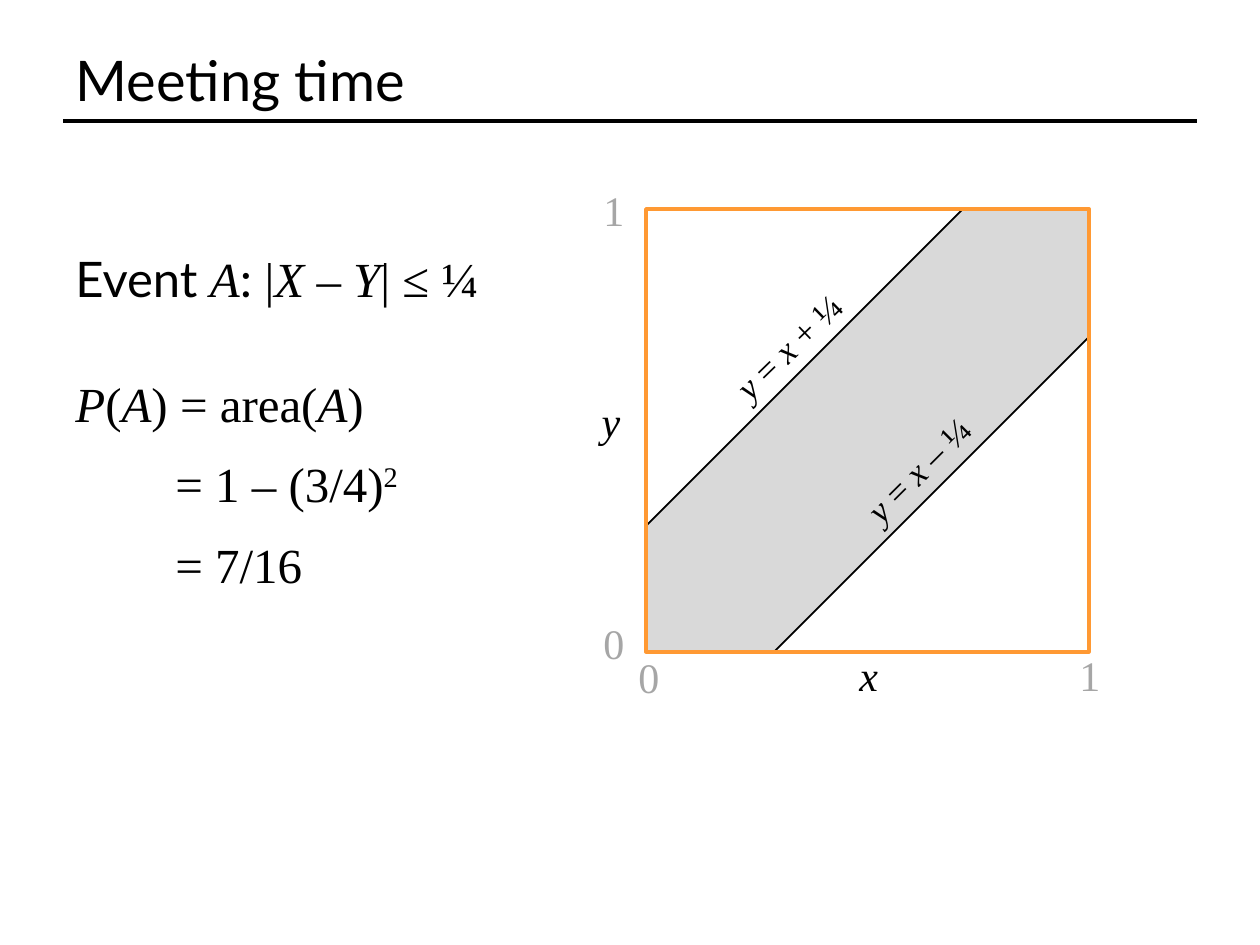
from lxml.etree import SubElement
from pptx import Presentation
from pptx.dml.color import RGBColor
from pptx.enum.shapes import MSO_CONNECTOR as CONNECTOR, MSO_SHAPE as SHAPE
from pptx.enum.text import MSO_ANCHOR as ANCHOR, MSO_AUTO_SIZE as AUTO_SIZE, PP_ALIGN as ALIGN
from pptx.oxml.ns import qn
from pptx.util import Emu, Pt

SCALE = 914400 / 126
LEFT, TOP, SIDE, OFFSET = 646, 209, 443, 126
RIGHT, BOTTOM = LEFT + SIDE, TOP + SIDE
BLACK, GREY, ORANGE, BAND = "000000", "A6A6A6", "FF9933", "D9D9D9"
SERIF = {"name": "Times New Roman", "italic": False}
ITALIC = {**SERIF, "italic": True}
SANS = {"name": "Lato", "italic": False}


def px(length):
    """Turn a length in px into EMU."""
    return Emu(round(length * SCALE))


def rgb(value):
    """Turn a hex string into a colour."""
    return RGBColor.from_string(value)


def add_run(paragraph, text, style, size, color):
    """Append one formatted run to a paragraph."""
    run = paragraph.add_run()
    run.text = text
    for key, value in {**style, "size": Pt(size)}.items():
        setattr(run.font, key, value)
    run.font.color.rgb = rgb(color)
    return run


def add_title(slide, text):
    """Place and format the title placeholder."""
    title = slide.shapes.title
    place = {"left": 63, "top": 38, "width": 1134, "height": 83}
    for key, value in place.items():
        setattr(title, key, px(value))
    frame = title.text_frame
    frame.auto_size = AUTO_SIZE.NONE
    frame.vertical_anchor = ANCHOR.MIDDLE
    frame.paragraphs[0].alignment = ALIGN.LEFT
    add_run(frame.paragraphs[0], text, SANS, 32, BLACK)


def add_text(slide, box, runs, size, color=BLACK, align=ALIGN.LEFT, rotation=0, wrap=False):
    """Add a text box of styled runs and return its last run."""
    label = slide.shapes.add_textbox(*map(px, box))
    label.rotation = rotation
    frame = label.text_frame
    frame.word_wrap = wrap
    frame.auto_size = AUTO_SIZE.SHAPE_TO_FIT_TEXT
    frame.paragraphs[0].alignment = align
    for text, style in runs:
        last = add_run(frame.paragraphs[0], text, style, size, color)
    return last


def add_line(slide, start, end, width):
    """Draw a straight black line without a shadow."""
    line = slide.shapes.add_connector(CONNECTOR.STRAIGHT, *map(px, (*start, *end)))
    line.line.color.rgb = rgb(BLACK)
    line.line.width = Pt(width)
    SubElement(line._element.spPr, qn("a:effectLst"))


def add_band(slide, points):
    """Fill the area of the event."""
    builder = slide.shapes.build_freeform(*map(px, points[0]), scale=1.0)
    builder.add_line_segments([tuple(map(px, point)) for point in points[1:]], close=True)
    band = builder.convert_to_shape()
    band.fill.solid()
    band.fill.fore_color.rgb = rgb(BAND)
    band.line.fill.background()
    band.shadow.inherit = False


def add_unit_square(slide):
    """Outline the sample space."""
    square = slide.shapes.add_shape(SHAPE.RECTANGLE, *map(px, (LEFT, TOP, SIDE, SIDE)))
    square.fill.background()
    square.line.color.rgb = rgb(ORANGE)
    square.line.width = Pt(2)
    square.shadow.inherit = False


def add_derivation(slide):
    """Write the event and its probability."""
    event = [("Event ", SANS), ("A", ITALIC), (": ", SANS), ("|", SERIF), ("X", ITALIC),
             (" – ", SERIF), ("Y", ITALIC), ("| ≤ ¼", SERIF)]
    area = [("P", ITALIC), ("(", SERIF), ("A", ITALIC), (") = area(", SERIF),
            ("A", ITALIC), (")", SERIF)]
    add_text(slide, (63, 242, 496, 72), event, 28, wrap=True)
    add_text(slide, (63, 367, 323, 72), area, 28)
    exponent = add_text(slide, (163, 447, 267, 72), [("= 1 – (3/4)", SERIF), ("2", SERIF)], 28)
    exponent.font._element.set("baseline", "30000")
    add_text(slide, (163, 528, 165, 72), [("= 7/16", SERIF)], 28)


def add_diagram(slide):
    """Draw the unit square with its band, bounds and axis labels."""
    upper = (LEFT, BOTTOM - OFFSET), (RIGHT - OFFSET, TOP)
    lower = (LEFT + OFFSET + 2, BOTTOM), (RIGHT, TOP + OFFSET + 2)
    add_band(slide, [*upper, (RIGHT, TOP), *reversed(lower), (LEFT, BOTTOM)])
    bounds = [
        (upper, (702, 316, 179, 55), [(" = ", SERIF), ("x", ITALIC), (" + ¼ ", SERIF)], 315.9),
        (lower, (834, 442, 168, 55), [(" = ", SERIF), ("x ", ITALIC), ("– ¼", SERIF)], 315.1),
    ]
    for ends, box, formula, rotation in bounds:
        add_line(slide, *ends, 1)
        add_text(slide, box, [("y", ITALIC), *formula], 20, align=ALIGN.CENTER, rotation=rotation)
    add_unit_square(slide)
    add_text(slide, (847, 643, 50, 63), [("x", ITALIC)], 24)
    add_text(slide, (586, 389, 50, 63), [("y", ITALIC)], 24, align=ALIGN.CENTER)
    for tick, left, top in [("0", 626, 645), ("1", 1067, 643), ("1", 591, 178), ("0", 591, 611)]:
        add_text(slide, (left, top, 45, 63), [(tick, SERIF)], 24, GREY)


def main():
    """Build and save the slide."""
    deck = Presentation()
    deck.slide_width, deck.slide_height = px(1260), px(945)
    slide = deck.slides.add_slide(deck.slide_layouts[5])
    add_line(slide, (63, 121), (1197, 121), 2)
    add_title(slide, "Meeting time")
    add_derivation(slide)
    add_diagram(slide)
    deck.save("out.pptx")


if __name__ == "__main__":
    main()
